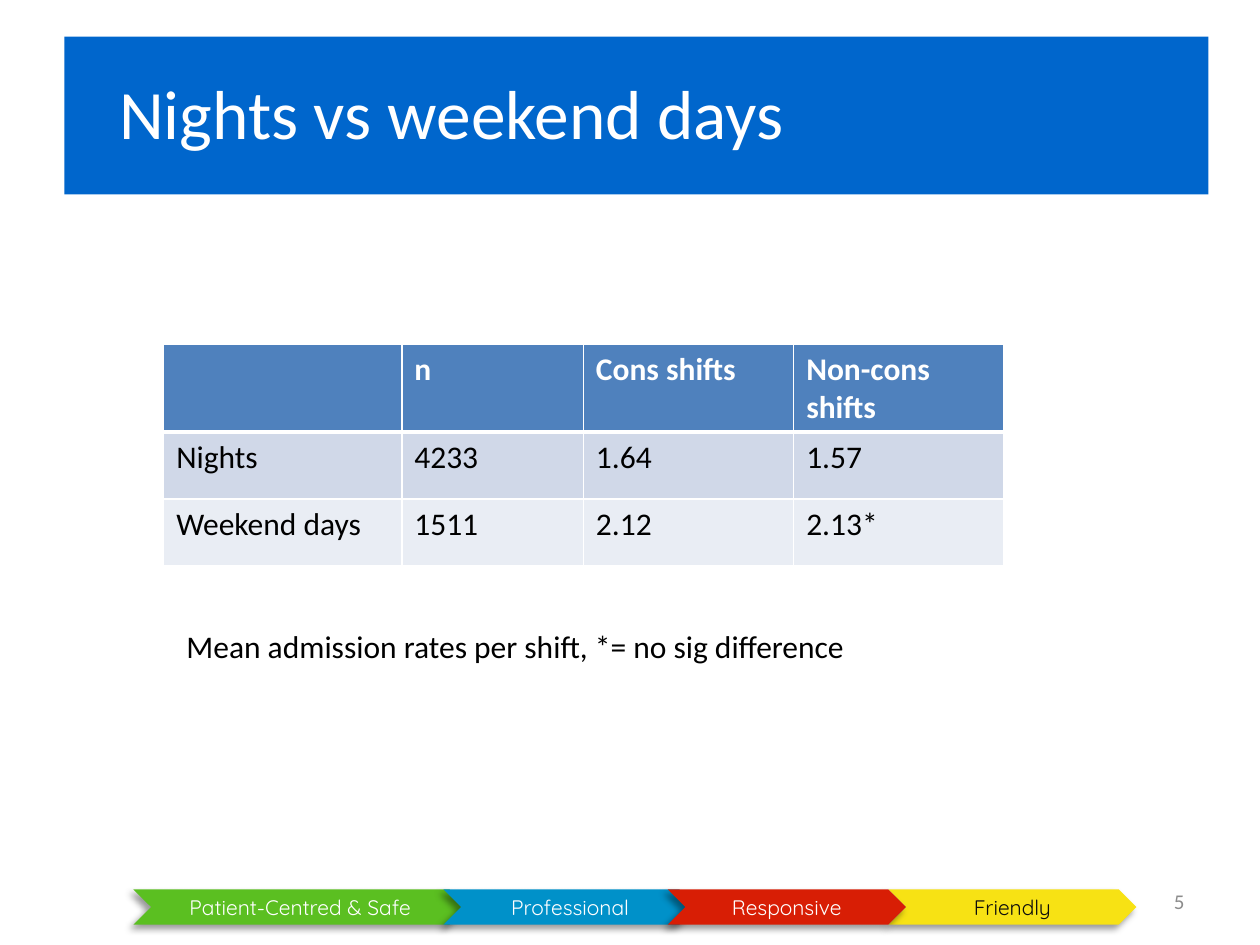
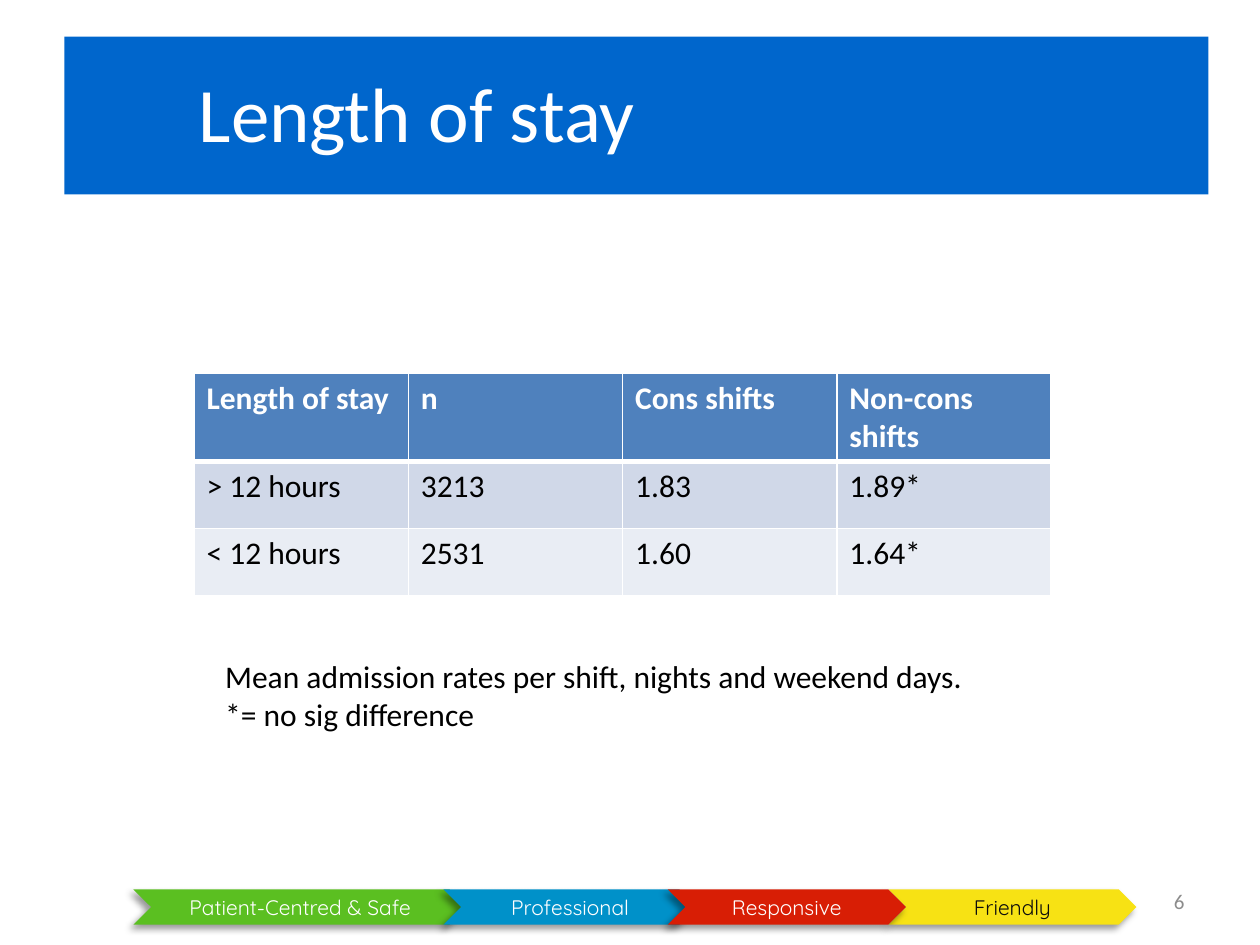
"""Build two slides of admission rates per shift, each with a table and a caption."""
import pptx
import pptx.util
import pptx.dml.color
import pptx.oxml
import pptx.oxml.ns
import pptx.enum.shapes
import pptx.enum.text
from lxml import etree

Cm, Pt = pptx.util.Cm, pptx.util.Pt
SHAPE = pptx.enum.shapes.MSO_SHAPE
ALIGN = pptx.enum.text.PP_ALIGN
ANCHOR = pptx.enum.text.MSO_ANCHOR
qn = pptx.oxml.ns.qn

WHITE, BLACK, GREY, BAND_BLUE = "FFFFFF", "000000", "8C8C8C", "0066CC"
ROW_FILLS = ["4F81BD", "D0D8E8", "E9EDF4"]
ROW_HEIGHTS = [1.78, 1.35, 1.35]
BAND_BOX = (1.3, 0.74, 23.06, 3.18)
NUMBER_BOX = (18.21, 17.65, 5.92, 1.02)
FIRST_NUMBER = 5

VALUES_TOP, VALUES_HEIGHT = 17.93, 0.71
VALUES = [
    ("Patient-Centred & Safe", 2.69, 6.73, "5BBF21", WHITE),
    ("Friendly", 17.91, 5.0, "F7E214", "0D0D0D"),
    ("Professional", 8.94, 5.11, "0091C9", WHITE),
    ("Responsive", 13.46, 4.8, "D81E05", WHITE),
]

SLIDES = [
    {
        "title": "Nights vs weekend days",
        "title_box": (1.7, 0.76, 14.81, 2.97),
        "title_size": 39.6,
        "table_at": (3.3, 6.93),
        "columns": [4.8, 3.66, 4.24, 4.24],
        "rows": [
            ["", "n", "Cons shifts", "Non-cons shifts"],
            ["Nights", "4233", "1.64", "1.57"],
            ["Weekend days", "1511", "2.12", "2.13*"],
        ],
        "caption": "Mean admission rates per shift, *= no sig difference",
        "caption_box": (3.51, 12.52, 16.74, 1.02),
    },
    {
        "title": "Length of stay",
        "title_box": (1.7, 0.76, 13.41, 2.97),
        "title_size": 44,
        "table_at": (3.91, 7.52),
        "columns": [4.32] * 4,
        "rows": [
            ["Length of stay", "n", "Cons shifts", "Non-cons shifts"],
            ["> 12 hours", "3213", "1.83", "1.89*"],
            ["< 12 hours", "2531", "1.60", "1.64*"],
        ],
        "caption": "Mean admission rates per shift, nights and weekend days. "
                   "*= no sig difference",
        "caption_box": (4.29, 13.13, 15.7, 1.8),
    },
]


def rgb(value):
    """Turn a hex string into a colour."""
    return pptx.dml.color.RGBColor.from_string(value)


def lengths(box):
    """Turn centimetres into slide lengths."""
    return [Cm(v) for v in box]


def write(tf, text, color, size=18, name="Calibri", bold=False, align=ALIGN.LEFT):
    """Write one formatted paragraph into a text frame."""
    p = tf.paragraphs[0]
    p.alignment = align
    r = p.add_run()
    r.text = text
    for key, value in {"size": Pt(size), "name": name, "bold": bold}.items():
        setattr(r.font, key, value)
    r.font.color.rgb = rgb(color)


def add_block(s, kind, box, fill):
    """Add a filled preset shape without outline or shadow."""
    sp = s.shapes.add_shape(kind, *lengths(box))
    sp.shadow.inherit = False
    sp.fill.solid()
    sp.fill.fore_color.rgb = rgb(fill)
    sp.line.fill.background()
    return sp


def add_shadow(sp):
    """Give a shape a soft shadow towards the lower left."""
    effects = sp.element.spPr.find(qn("a:effectLst"))
    shadow = etree.SubElement(effects, qn("a:outerShdw"), blurRad=str(Pt(4)),
                              dist=str(Pt(3)), dir="8100000", rotWithShape="0")
    color = etree.SubElement(shadow, qn("a:srgbClr"), val=BLACK)
    etree.SubElement(color, qn("a:alpha"), val="40000")


def add_text(s, box, text, color, anchor=ANCHOR.TOP, **style):
    """Add a wrapping text box."""
    tf = s.shapes.add_textbox(*lengths(box)).text_frame
    tf.word_wrap = True
    tf.vertical_anchor = anchor
    write(tf, text, color, **style)


def add_title(s, text, box, size):
    """Place the title over its blue band."""
    title = s.shapes.title
    title.left, title.top, title.width, title.height = lengths(box)
    band = add_block(s, SHAPE.RECTANGLE, BAND_BOX, BAND_BLUE)
    title.element.addprevious(band.element)
    tf = title.text_frame
    tf.auto_size = pptx.enum.text.MSO_AUTO_SIZE.NONE
    tf.vertical_anchor = ANCHOR.MIDDLE
    write(tf, text, WHITE, size=size, align=ALIGN.CENTER)


def add_footer(s, number):
    """Add the chevrons of values and the slide number."""
    for text, left, width, fill, color in VALUES:
        sp = add_block(s, SHAPE.CHEVRON, (left, VALUES_TOP, width, VALUES_HEIGHT), fill)
        add_shadow(sp)
        tf = sp.text_frame
        tf.word_wrap = False
        tf.margin_top = tf.margin_bottom = 0
        tf.vertical_anchor = ANCHOR.MIDDLE
        write(tf, text, color, size=12, name="Quicksand", align=ALIGN.CENTER)
    add_text(s, NUMBER_BOX, str(number), GREY, anchor=ANCHOR.MIDDLE,
             size=12, align=ALIGN.RIGHT)


def add_borders(cell, top, bottom):
    """Draw white cell borders of the given widths in points."""
    tc_pr = cell._tc.get_or_add_tcPr()
    for side, width in {"L": 1, "R": 1, "T": top, "B": bottom}.items():
        ln = etree.SubElement(tc_pr, qn(f"a:ln{side}"), w=str(Pt(width)))
        fill = etree.SubElement(ln, qn("a:solidFill"))
        etree.SubElement(fill, qn("a:srgbClr"), val=WHITE)


def add_rates(s, rows, at, columns):
    """Add the table of rates with a dark heading row."""
    size = (sum(columns), sum(ROW_HEIGHTS))
    table = s.shapes.add_table(len(rows), len(columns), *lengths(at + size)).table
    for column, width in zip(table.columns, columns):
        column.width = Cm(width)
    for i, texts in enumerate(rows):
        table.rows[i].height = Cm(ROW_HEIGHTS[i])
        head = i == 0
        for j, text in enumerate(texts):
            cell = table.cell(i, j)
            add_borders(cell, top=3 if i == 1 else 1, bottom=3 if head else 1)
            cell.fill.solid()
            cell.fill.fore_color.rgb = rgb(ROW_FILLS[i])
            if text:
                write(cell.text_frame, text, WHITE if head else BLACK, bold=head)


def main():
    """Build and save the slides."""
    prs = pptx.Presentation()
    prs.slide_width, prs.slide_height = Cm(25.4), Cm(19.05)
    for number, item in enumerate(SLIDES, FIRST_NUMBER):
        s = prs.slides.add_slide(prs.slide_layouts.get_by_name("Title Only"))
        add_title(s, item["title"], item["title_box"], item["title_size"])
        add_footer(s, number)
        add_rates(s, item["rows"], item["table_at"], item["columns"])
        add_text(s, item["caption_box"], item["caption"], BLACK)
    prs.save("out.pptx")


if __name__ == "__main__":
    main()
